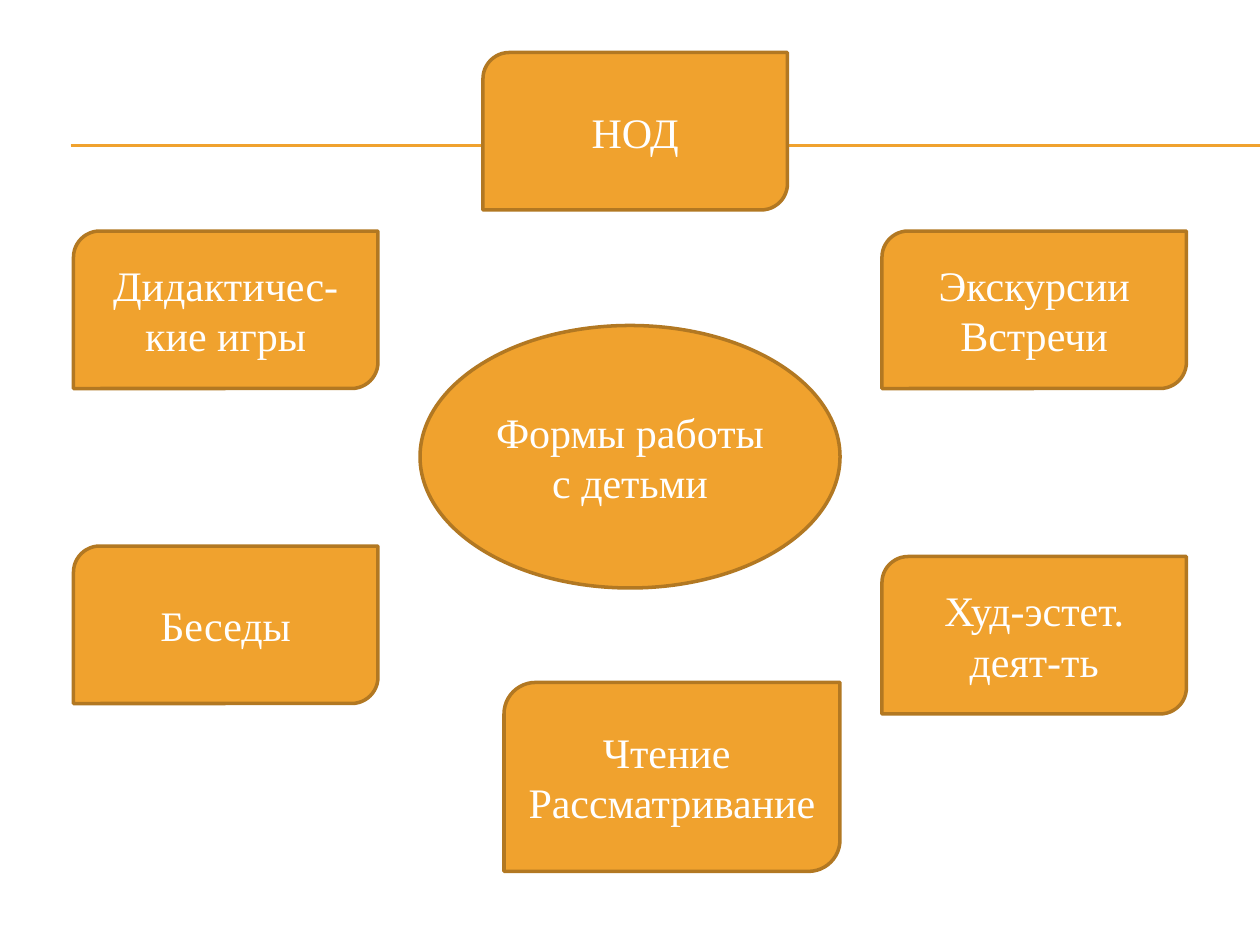
from pptx import Presentation
from pptx.dml.color import RGBColor
from pptx.enum.shapes import MSO_CONNECTOR, MSO_SHAPE
from pptx.enum.text import MSO_ANCHOR, PP_ALIGN
from pptx.oxml.ns import qn
from pptx.util import Inches, Pt
from lxml.etree import SubElement

HUES = {"fill": "F0A22E", "edge": "B27822", "text": "FFFFFF"}
FONT = "Times New Roman"
COLS, ROWS = 120, 90
CARD = (29, 15)
LEFT, RIGHT, TOP = 7, 84, 22
RULES = [1.15, 1.16]
CARDS = [
    (LEFT, TOP, CARD, ["Дидактичес-", "кие игры"]),
    (46, 5, CARD, ["НОД"]),
    (RIGHT, 53, CARD, ["Худ-эстет.", "деят-ть"]),
    (LEFT, 52, CARD, ["Беседы"]),
    (RIGHT, TOP, CARD, ["Экскурсии", "Встречи"]),
    (48, 65, (32, 18), ["Чтение ", "Рассматривание"]),
]
HUB = (40, 31, (40, 25), ["Формы работы", "с детьми"])

deck = Presentation()
deck.slide_width, deck.slide_height = Inches(10), Inches(7.5)
slide = deck.slides.add_slide(deck.slide_layouts[6])
unit_x = deck.slide_width / COLS
unit_y = deck.slide_height / ROWS


def hue(name):
    return RGBColor.from_string(HUES[name])


def add_rule(y):
    rule = slide.shapes.add_connector(
        MSO_CONNECTOR.STRAIGHT, Inches(0.56), Inches(y), deck.slide_width, Inches(y))
    rule.line.color.rgb = hue("fill")
    rule.line.width = Pt(0.75)
    SubElement(rule._element.spPr, qn("a:effectLst"))


def add_node(kind, col, row, size, lines):
    wide, high = size
    node = slide.shapes.add_shape(
        kind, round(col * unit_x), round(row * unit_y),
        round(wide * unit_x), round(high * unit_y))
    node.shadow.inherit = False
    node.fill.solid()
    node.fill.fore_color.rgb = hue("fill")
    node.line.color.rgb = hue("edge")
    node.line.width = Pt(2)
    frame = node.text_frame
    frame.word_wrap = True
    frame.vertical_anchor = MSO_ANCHOR.MIDDLE
    for i, line in enumerate(lines):
        para = frame.add_paragraph() if i else frame.paragraphs[0]
        para.alignment = PP_ALIGN.CENTER
        run = para.add_run()
        run.text = line
        run.font.name = FONT
        run.font.size = Pt(24)
        run.font.color.rgb = hue("text")


for y in RULES:
    add_rule(y)
for card in CARDS:
    add_node(MSO_SHAPE.ROUND_2_DIAG_RECTANGLE, *card)
add_node(MSO_SHAPE.OVAL, *HUB)

deck.save("out.pptx")
